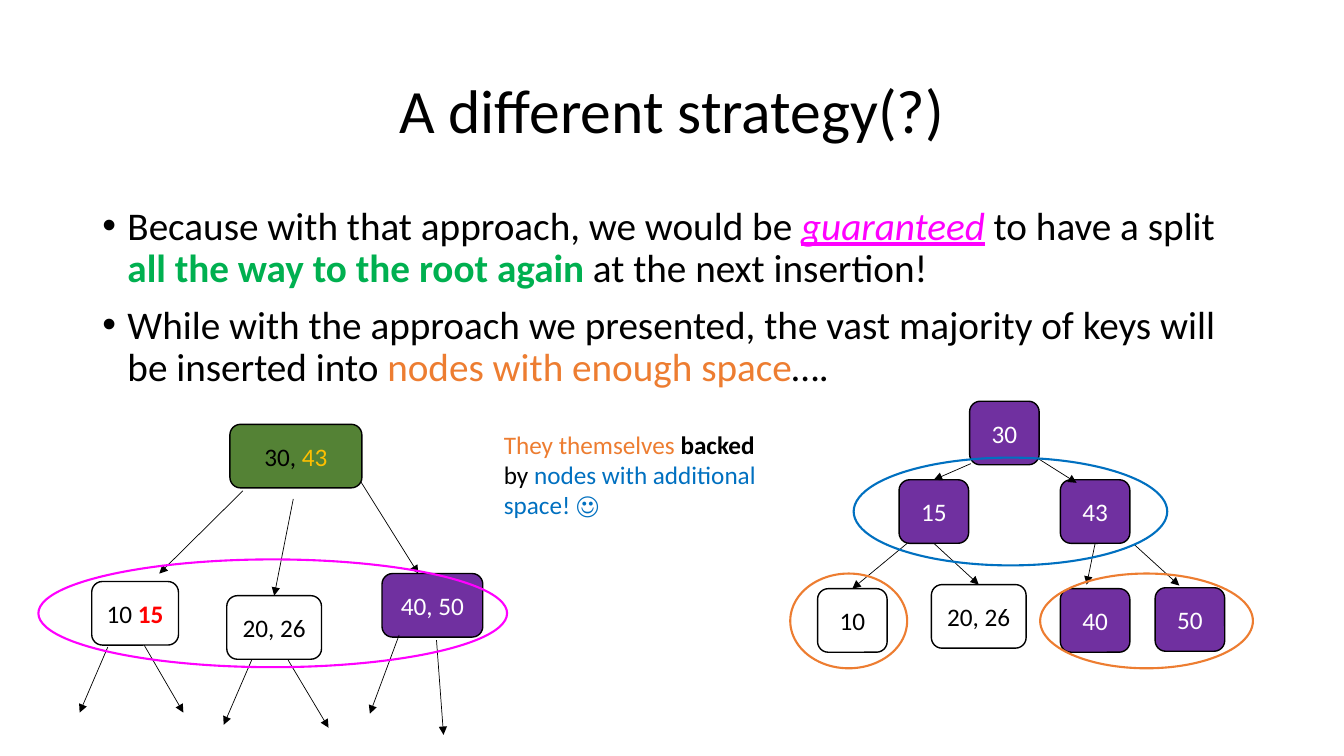
from lxml import etree
from pptx import Presentation
from pptx.dml.color import RGBColor
from pptx.enum import shapes, text
from pptx.oxml import ns
from pptx.util import Pt

BLACK = RGBColor(0x00, 0x00, 0x00)
WHITE = RGBColor(0xFF, 0xFF, 0xFF)
MAGENTA = RGBColor(0xFF, 0x00, 0xFF)
GREEN = RGBColor(0x00, 0xB0, 0x50)
DARK_GREEN = RGBColor(0x54, 0x82, 0x35)
ORANGE = RGBColor(0xED, 0x7D, 0x31)
GOLD = RGBColor(0xFF, 0xC0, 0x00)
RED = RGBColor(0xFF, 0x00, 0x00)
PURPLE = RGBColor(0x70, 0x30, 0xA0)
BLUE = RGBColor(0x00, 0x70, 0xC0)

prs = Presentation()
prs.slide_width, prs.slide_height = Pt(960), Pt(540)
s = prs.slides.add_slide(prs.slide_layouts[6])


def add_runs(p, size, runs):
    for words, color, style in runs:
        r = p.add_run()
        r.text = words
        r.font.name, r.font.size = "Calibri", Pt(size)
        r.font.color.rgb = color
        if "b" in style:
            r.font.bold = True
        if "i" in style:
            r.font.italic = True
        if "u" in style:
            r.font.underline = True


def add_outline(kind, box, line, width, fill=None):
    sp = s.shapes.add_shape(kind, *[Pt(v) for v in box])
    sp.shadow.inherit = False
    sp.line.color.rgb, sp.line.width = line, Pt(width)
    if fill is None:
        sp.fill.background()
    else:
        sp.fill.solid()
        sp.fill.fore_color.rgb = fill
    return sp


title = s.shapes.add_textbox(Pt(66), Pt(28.8), Pt(828), Pt(104.4))
tf = title.text_frame
tf.word_wrap = True
tf.vertical_anchor = text.MSO_ANCHOR.MIDDLE
p = tf.paragraphs[0]
p.alignment, p.line_spacing = text.PP_ALIGN.CENTER, 0.9
add_runs(p, 44, [("A different strategy(?)", BLACK, "")])

bullets = [
    [("Because with that approach, we would be ", BLACK, ""),
     ("guaranteed", MAGENTA, "iu"),
     (" to have a split ", BLACK, ""),
     ("all the way to the root again ", GREEN, "b"),
     ("at the next insertion!", BLACK, "")],
    [("While with the approach we presented, the vast majority of keys "
      "will be inserted into ", BLACK, ""),
     ("nodes with enough space", ORANGE, ""),
     ("….", BLACK, "")],
]
body = s.shapes.add_textbox(Pt(66), Pt(144), Pt(828), Pt(342.7))
tf = body.text_frame
tf.word_wrap = True
for i, runs in enumerate(bullets):
    p = tf.add_paragraph() if i else tf.paragraphs[0]
    p.line_spacing, p.space_before = 0.9, Pt(10 * i)
    pPr = p._p.get_or_add_pPr()
    pPr.set("marL", str(Pt(18)))
    pPr.set("indent", str(-Pt(18)))
    etree.SubElement(pPr, ns.qn("a:buFont")).set("typeface", "Arial")
    etree.SubElement(pPr, ns.qn("a:buChar")).set("char", "•")
    add_runs(p, 28, runs)

node_specs = {
    "left root": (164.2, 303.1, 94.3, DARK_GREEN, [("30, ", BLACK, ""), ("43", GOLD, "")]),
    "left 10 15": (65.5, 415.4, 62, None, [("10 ", BLACK, ""), ("15", RED, "b")]),
    "left 20 26": (162, 425.5, 67.7, None, [("20, 26", BLACK, "")]),
    "left 40 50": (272.9, 409.7, 72, PURPLE, [("40, 50", WHITE, "")]),
    "10": (584, 420.5, 49.7, None, [("10", BLACK, "")]),
    "20 26": (665.3, 417.6, 67.7, None, [("20, 26", BLACK, "")]),
    "50": (825.1, 419.8, 49.7, PURPLE, [("50", WHITE, "")]),
    "40": (757.4, 420.5, 49.7, PURPLE, [("40", WHITE, "")]),
    "43": (757.4, 342.7, 49.7, PURPLE, [("43", WHITE, "")]),
    "15": (642.2, 342.7, 49.7, PURPLE, [("15", WHITE, "")]),
    "30": (692.6, 286.6, 49.7, PURPLE, [("30", WHITE, "")]),
}
nodes = {}
for name, (x, y, w, fill, runs) in node_specs.items():
    sp = add_outline(shapes.MSO_SHAPE.ROUNDED_RECTANGLE, (x, y, w, 45.4), BLACK, 1, fill)
    tf = sp.text_frame
    tf.vertical_anchor = text.MSO_ANCHOR.MIDDLE
    tf.paragraphs[0].alignment = text.PP_ALIGN.CENTER
    add_runs(tf.paragraphs[0], 18, runs)
    nodes[name] = sp

arrows = [
    ((173.5, 350.6), (113.8, 409.7)),
    ((209.5, 356.4), "left 20 26"),
    ((257.8, 344.2), (298.8, 409.7)),
    ((77, 462.2), (56.9, 509)),
    ((103, 460.8), (131, 509)),
    ((180, 470.9), (159.8, 517.7)),
    ((205.9, 471.6), (234.7, 519.8)),
    ((285.1, 453.6), (264.2, 509.8)),
    ((311.8, 457.2), (316.8, 524.9)),
    ((693.4, 331.2), "15"),
    ((741.6, 327.6), (769, 344.9)),
    ((648, 388.1), "10"),
    ("15", "20 26"),
    ("43", (776.2, 417.6)),
    ((810, 388.8), (842.4, 418.3)),
]
for start, end in arrows:
    x1, y1 = (0, 0) if start in nodes else start
    x2, y2 = (0, 0) if end in nodes else end
    cx = s.shapes.add_connector(shapes.MSO_CONNECTOR.STRAIGHT, Pt(x1), Pt(y1), Pt(x2), Pt(y2))
    if start in nodes:
        cx.begin_connect(nodes[start], 2)
    if end in nodes:
        cx.end_connect(nodes[end], 0)
    cx.line.color.rgb, cx.line.width = BLACK, Pt(0.5)
    etree.SubElement(cx.line._get_or_add_ln(), ns.qn("a:tailEnd")).set("type", "triangle")
    etree.SubElement(cx._element.spPr, ns.qn("a:effectLst"))

note = s.shapes.add_textbox(Pt(352.8), Pt(303.1), Pt(195.8), Pt(72.7))
tf = note.text_frame
tf.word_wrap = True
add_runs(tf.paragraphs[0], 18, [
    ("They themselves ", ORANGE, ""),
    ("backed", BLACK, "b"),
    (" by ", BLACK, ""),
    ("nodes with additional space! ☺", BLUE, ""),
])

rings = [
    ((27.4, 399.6, 334.8, 77), MAGENTA),
    ((564.5, 409.7, 83.5, 67.7), ORANGE),
    ((743, 409.7, 152, 67.7), ORANGE),
    ((609.8, 326.9, 224, 77), BLUE),
]
for box, color in rings:
    add_outline(shapes.MSO_SHAPE.OVAL, box, color, 1.5)

prs.save("out.pptx")
